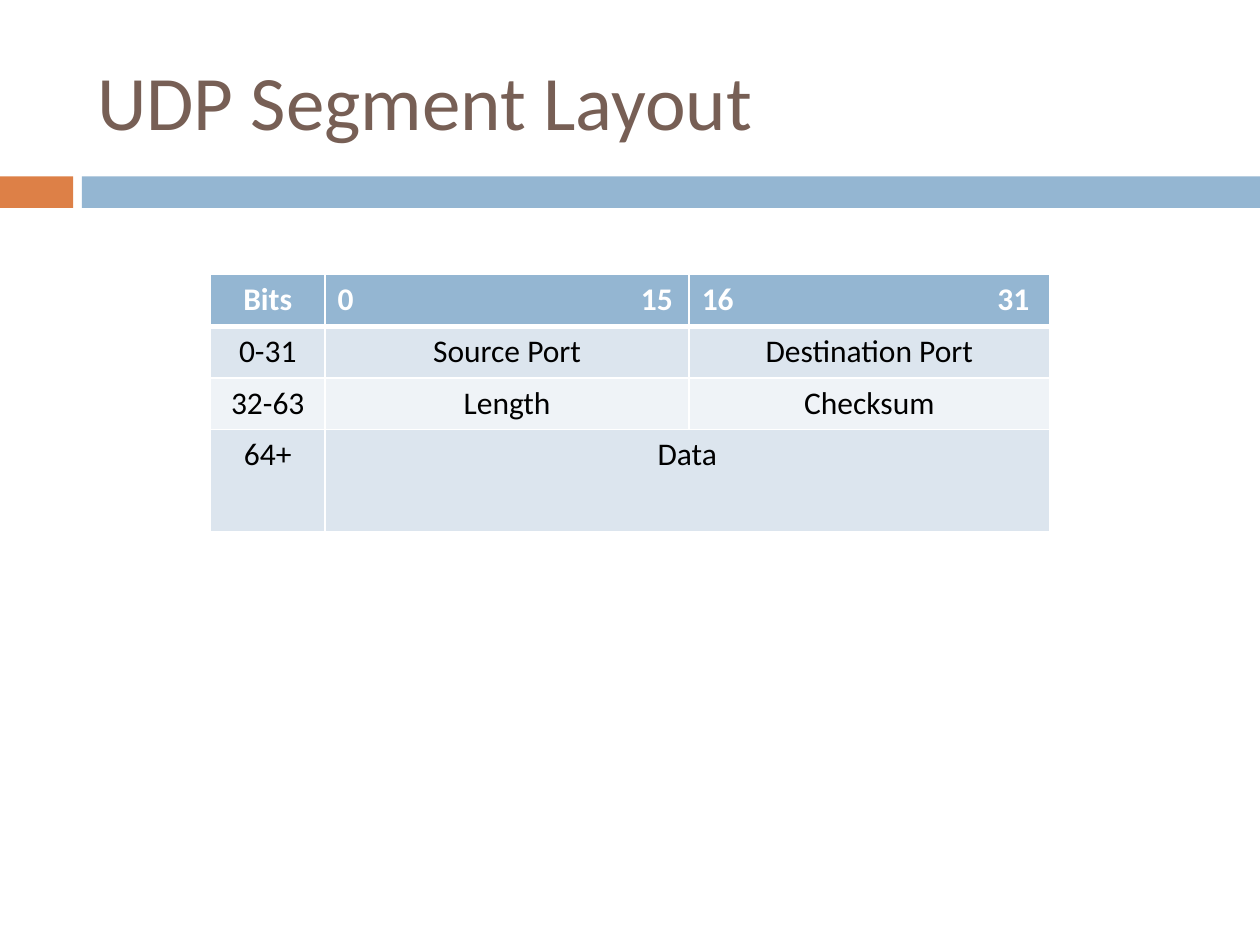
from dataclasses import dataclass

from lxml import etree
from pptx import Presentation
from pptx.dml.color import RGBColor
from pptx.enum.shapes import MSO_SHAPE
from pptx.enum.text import MSO_ANCHOR, PP_ALIGN
from pptx.oxml.ns import qn
from pptx.util import Inches, Pt

RECTANGLE = MSO_SHAPE.RECTANGLE
MIDDLE = MSO_ANCHOR.MIDDLE
LEFT, CENTER = PP_ALIGN.LEFT, PP_ALIGN.CENTER

FONT = "Calibri"
COLORS = {
    "title": "775F55",
    "accent": "DD8047",
    "header": "94B6D2",
    "odd_row": "DCE5EE",
    "even_row": "EFF3F7",
    "white": "FFFFFF",
    "black": "000000",
}


@dataclass
class Bar:
    left: float
    width: float
    color: str


@dataclass
class Row:
    texts: list[str]
    height: float
    fill: str
    top_border: float = 1
    bottom_border: float = 1
    header: bool = False


BARS = [Bar(0, 0.58, "accent"), Bar(0.65, 9.35, "header")]
COLUMN_WIDTHS = [0.91, 2.89, 2.86]
HEADER_TABS = [None, 2.66, 2.6]  # right-aligned stops for the last bit number
ROWS = [
    Row(["Bits", "0\t15", "16\t31"], 0.41, "header", bottom_border=3, header=True),
    Row(["0-31", "Source Port", "Destination Port"], 0.41, "odd_row", top_border=3),
    Row(["32-63", "Length", "Checksum"], 0.41, "even_row"),
    Row(["64+", "Data"], 0.81, "odd_row"),
]


def rgb(name: str) -> RGBColor:
    return RGBColor.from_string(COLORS[name])


def add_text(paragraph, text: str, size: float, color: str, bold: bool = False) -> None:
    run = paragraph.add_run()
    run.text = text
    run.font.name = FONT
    run.font.size = Pt(size)
    run.font.bold = bold
    run.font.color.rgb = rgb(color)


def add_bar(slide, bar: Bar) -> None:
    shape = slide.shapes.add_shape(
        RECTANGLE, Inches(bar.left), Inches(1.4), Inches(bar.width), Inches(0.25)
    )
    shape.shadow.inherit = False
    shape.fill.solid()
    shape.fill.fore_color.rgb = rgb(bar.color)
    shape.line.fill.background()


def add_right_tab(paragraph, position: float) -> None:
    properties = paragraph._p.get_or_add_pPr()
    tabs = etree.SubElement(properties, qn("a:tabLst"))
    etree.SubElement(tabs, qn("a:tab"), pos=str(Inches(position)), algn="r")


def set_borders(cell, top: float, bottom: float) -> None:
    properties = cell._tc.get_or_add_tcPr()
    for side, width in (("L", 1), ("R", 1), ("T", top), ("B", bottom)):
        line = etree.SubElement(properties, qn(f"a:ln{side}"), w=str(Pt(width)))
        fill = etree.SubElement(line, qn("a:solidFill"))
        etree.SubElement(fill, qn("a:srgbClr"), val=COLORS["white"])


def fill_cell(cell, row: Row, text: str, tab: float | None) -> None:
    set_borders(cell, row.top_border, row.bottom_border)
    cell.fill.solid()
    cell.fill.fore_color.rgb = rgb(row.fill)
    paragraph = cell.text_frame.paragraphs[0]
    paragraph.alignment = CENTER
    if row.header and tab:
        paragraph.alignment = LEFT
        add_right_tab(paragraph, tab)
    if text:
        color = "white" if row.header else "black"
        add_text(paragraph, text, 18, color, row.header)


def add_segment_table(slide) -> None:
    table = slide.shapes.add_table(
        len(ROWS), len(COLUMN_WIDTHS), Inches(1.67), Inches(2.18),
        Inches(sum(COLUMN_WIDTHS)), Inches(sum(row.height for row in ROWS)),
    ).table
    for column, width in zip(table.columns, COLUMN_WIDTHS):
        column.width = Inches(width)
    for row_index, row in enumerate(ROWS):
        table.rows[row_index].height = Inches(row.height)
        for column_index, tab in enumerate(HEADER_TABS):
            texts = row.texts
            text = texts[column_index] if column_index < len(texts) else ""
            fill_cell(table.cell(row_index, column_index), row, text, tab)
    # The data field spans both halves of the segment
    table.cell(3, 1).merge(table.cell(3, 2))


def main() -> None:
    presentation = Presentation()
    presentation.slide_width = Inches(10)
    presentation.slide_height = Inches(7.5)
    slide = presentation.slides.add_slide(presentation.slide_layouts[5])

    # Divider bars
    for bar in BARS:
        add_bar(slide, bar)

    # Segment layout
    add_segment_table(slide)

    # Title
    title = slide.shapes.title
    title.left, title.top = Inches(0.67), Inches(0.25)
    title.width, title.height = Inches(8.92), Inches(1.08)
    title.text_frame.vertical_anchor = MIDDLE
    paragraph = title.text_frame.paragraphs[0]
    paragraph.alignment = LEFT
    add_text(paragraph, "UDP Segment Layout", 44, "title")

    presentation.save("out.pptx")


if __name__ == "__main__":
    main()
